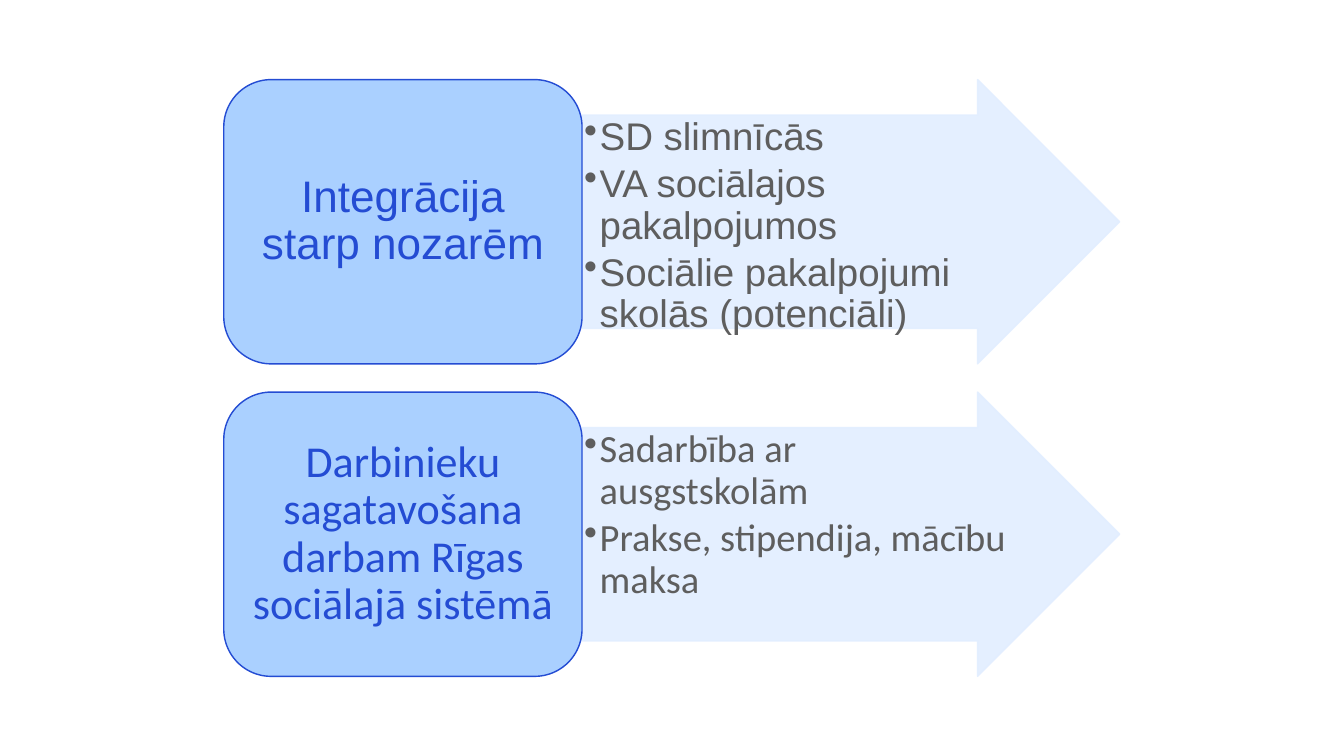
import pptx
import pptx.dml.color
import pptx.enum.shapes
import pptx.enum.text
import pptx.oxml.ns
import pptx.util
from lxml import etree

Inches = pptx.util.Inches
Pt = pptx.util.Pt
RGBColor = pptx.dml.color.RGBColor
MSO_SHAPE = pptx.enum.shapes.MSO_SHAPE
MSO_ANCHOR = pptx.enum.text.MSO_ANCHOR
PP_ALIGN = pptx.enum.text.PP_ALIGN
qn = pptx.oxml.ns.qn

BLUE = RGBColor(0x24, 0x4C, 0xD3)
LIGHT_BLUE = RGBColor(0xAA, 0xD0, 0xFF)
PALE_BLUE = RGBColor(0xE2, 0xEE, 0xFF)
GREY = RGBColor(0x5E, 0x5E, 0x5E)

LEFT, TOP = 4.44, 1.58
TOPIC_WIDTH, ARROW_WIDTH = 7.11, 10.67
ROW_HEIGHT, ROW_PITCH = 5.64, 6.2

ROWS = [
    ("Arial", "Integrācija starp nozarēm",
     ["SD slimnīcās", "VA sociālajos pakalpojumos",
      "Sociālie pakalpojumi skolās (potenciāli)"]),
    ("Calibri", "Darbinieku sagatavošana darbam Rīgas sociālajā sistēmā",
     ["Sadarbība ar ausgstskolām", "Prakse, stipendija, mācību maksa"]),
]


class SlideBuilder:
    topic_size = 63
    detail_size = 55
    line_width = 2
    line_spacing = 0.9
    bullet_indent = 0.31

    def __init__(self, slide):
        self.slide = slide

    def box(self, kind, left, top, width, fill, line, margins, anchor):
        shape = self.slide.shapes.add_shape(
            kind, Inches(left), Inches(top), Inches(width), Inches(ROW_HEIGHT))
        shape.shadow.inherit = False
        shape.fill.solid()
        shape.fill.fore_color.rgb = fill
        shape.line.color.rgb = line
        shape.line.width = Pt(self.line_width)
        frame = shape.text_frame
        frame.word_wrap = True
        frame.vertical_anchor = anchor
        frame.margin_left = frame.margin_right = Inches(margins[0])
        frame.margin_top = frame.margin_bottom = Inches(margins[1])
        return shape

    def add_text(self, paragraph, text, font, size, color, alignment):
        paragraph.alignment = alignment
        paragraph.line_spacing = self.line_spacing
        run = paragraph.add_run()
        run.text = text
        run.font.name = font
        run.font.size = Pt(size)
        run.font.color.rgb = color

    def bullet(self, paragraph):
        properties = paragraph._p.get_or_add_pPr()
        indent = Inches(self.bullet_indent)
        properties.set("marL", str(indent))
        properties.set("indent", str(-indent))
        etree.SubElement(properties, qn("a:buChar")).set("char", "•")

    def make_translucent(self, shape, percent):
        """Set the opacity of the shape's fill and line."""
        for color in shape._element.spPr.iter(qn("a:srgbClr")):
            etree.SubElement(color, qn("a:alpha")).set("val", str(percent * 1000))

    def detail_arrow(self, left, top, items, font):
        arrow = self.box(MSO_SHAPE.RIGHT_ARROW, left, top, ARROW_WIDTH,
                         PALE_BLUE, PALE_BLUE, (0.04, 0.04), MSO_ANCHOR.TOP)
        arrow.adjustments[0] = 0.75
        arrow.adjustments[1] = 0.5
        self.make_translucent(arrow, 90)
        frame = arrow.text_frame
        for index, item in enumerate(items):
            paragraph = frame.add_paragraph() if index else frame.paragraphs[0]
            paragraph.level = 1
            paragraph.space_after = Pt(8)
            self.add_text(paragraph, item, font, self.detail_size, GREY, PP_ALIGN.LEFT)
            self.bullet(paragraph)

    def topic_box(self, left, top, text, font):
        topic = self.box(MSO_SHAPE.ROUNDED_RECTANGLE, left, top, TOPIC_WIDTH,
                         LIGHT_BLUE, BLUE, (0.26, 0.13), MSO_ANCHOR.MIDDLE)
        self.add_text(topic.text_frame.paragraphs[0], text, font,
                      self.topic_size, BLUE, PP_ALIGN.CENTER)


def main():
    presentation = pptx.Presentation()
    presentation.slide_width = Inches(26.67)
    presentation.slide_height = Inches(15)
    builder = SlideBuilder(presentation.slides.add_slide(presentation.slide_layouts[6]))
    for index, (font, topic, details) in enumerate(ROWS):
        top = TOP + index * ROW_PITCH
        builder.detail_arrow(LEFT + TOPIC_WIDTH, top, details, font)
        builder.topic_box(LEFT, top, topic, font)
    presentation.save("out.pptx")


if __name__ == "__main__":
    main()
